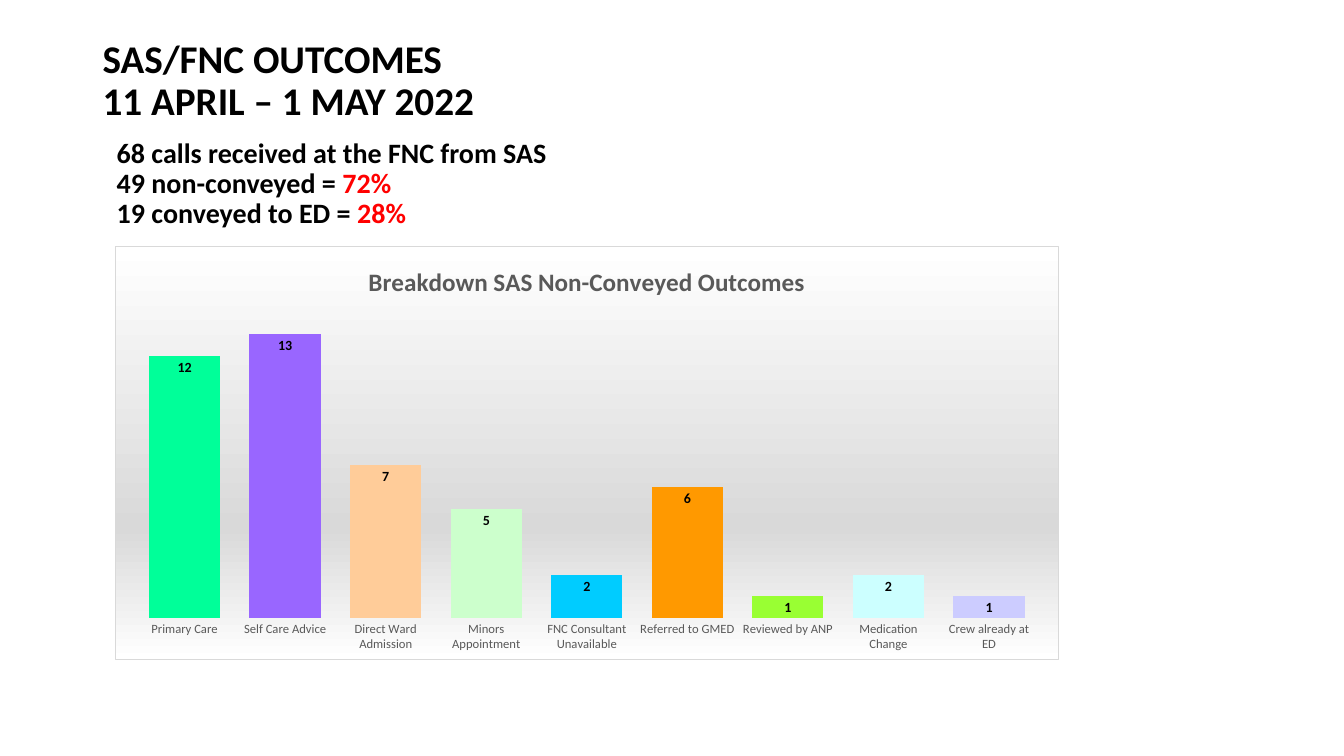
from lxml import etree
from pptx import Presentation
from pptx.chart.data import CategoryChartData
from pptx.dml.color import RGBColor
from pptx.enum.chart import XL_CHART_TYPE, XL_LABEL_POSITION, XL_TICK_MARK
from pptx.oxml import parse_xml
from pptx.oxml.ns import nsdecls, qn
from pptx.util import Inches, Pt

COLUMNS = XL_CHART_TYPE.COLUMN_CLUSTERED
INSIDE_END = XL_LABEL_POSITION.INSIDE_END
NO_TICK = XL_TICK_MARK.NONE

BLACK = RGBColor(0x00, 0x00, 0x00)
RED = RGBColor(0xFF, 0x00, 0x00)
GREY = RGBColor(0x59, 0x59, 0x59)
FONT = "Calibri"

# Content: each line is a list of (text, colour) runs
TITLE_LINES = [
    [("SAS/FNC OUTCOMES", BLACK)],
    [("11 APRIL – 1 MAY 2022", BLACK)],
]
SUMMARY_LINES = [
    [("68 calls received at the FNC from SAS", BLACK)],
    [("49 non-conveyed = ", BLACK), ("72%", RED)],
    [("19 conveyed to ED = ", BLACK), ("28%", RED)],
]
CHART_TITLE = "Breakdown SAS Non-Conveyed Outcomes"
OUTCOMES = [
    ("Primary Care", 12, "00FF99"),
    ("Self Care Advice", 13, "9966FF"),
    ("Direct Ward Admission", 7, "FFCC99"),
    ("Minors Appointment", 5, "CCFFCC"),
    ("FNC Consultant Unavailable", 2, "00CCFF"),
    ("Referred to GMED", 6, "FF9900"),
    ("Reviewed by ANP", 1, "99FF33"),
    ("Medication Change", 2, "CCFFFF"),
    ("Crew already at ED", 1, "CCCCFF"),
]
PLOT_AREA = {"x": 0.02, "y": 0.16, "w": 0.96, "h": 0.74}
CHART_FRAME = f"""<c:spPr {nsdecls("c", "a")}>
  <a:gradFill><a:gsLst>
    <a:gs pos="0"><a:srgbClr val="FFFFFF"/></a:gs>
    <a:gs pos="68000"><a:srgbClr val="D9D9D9"/></a:gs>
    <a:gs pos="100000"><a:srgbClr val="FFFFFF"/></a:gs>
  </a:gsLst><a:lin ang="5400000" scaled="0"/></a:gradFill>
  <a:ln w="9525"><a:solidFill><a:srgbClr val="D9D9D9"/></a:solidFill></a:ln>
</c:spPr>"""


def style_font(font, size, color, bold=False):
    font.name = FONT
    font.size = Pt(size)
    font.bold = bold
    font.color.rgb = color


def add_lines(slide, lines, box, size):
    frame = slide.shapes.add_textbox(*map(Inches, box)).text_frame
    frame.word_wrap = True
    paragraph = frame.paragraphs[0]
    paragraph.line_spacing = 0.9
    for index, line in enumerate(lines):
        if index:
            paragraph.add_line_break()
        for text, color in line:
            run = paragraph.add_run()
            run.text = text
            style_font(run.font, size, color, bold=True)


def add_outcome_chart(slide):
    data = CategoryChartData()
    data.categories = [name for name, _, _ in OUTCOMES]
    data.add_series("Series 1", [value for _, value, _ in OUTCOMES])
    box = map(Inches, (1.14, 2.44, 9.36, 4.11))
    chart = slide.shapes.add_chart(COLUMNS, *box, data).chart
    style_font(chart.font, 10, BLACK)
    chart.has_legend = False

    # Heading
    chart.has_title = True
    run = chart.chart_title.text_frame.paragraphs[0].add_run()
    run.text = CHART_TITLE
    style_font(run.font, 18, GREY, bold=True)
    chart.chart_title.include_in_layout = False

    # Axes
    category_axis = chart.category_axis
    category_axis.major_tick_mark = NO_TICK
    category_axis.format.line.fill.background()
    style_font(category_axis.tick_labels.font, 9, GREY)
    value_axis = chart.value_axis
    value_axis.visible = False
    value_axis.has_major_gridlines = False
    value_axis.minimum_scale = 0
    value_axis.maximum_scale = 14

    # Columns and value labels
    plot = chart.plots[0]
    plot.gap_width = 41
    plot.vary_by_categories = False
    series = plot.series[0]
    for index, (_, _, color) in enumerate(OUTCOMES):
        fill = series.points[index].format.fill
        fill.solid()
        fill.fore_color.rgb = RGBColor.from_string(color)
    labels = series.data_labels
    labels.show_value = True
    labels.position = INSIDE_END
    style_font(labels.font, 10, BLACK, bold=True)

    # Gradient frame with square corners
    chart_space = chart.element
    chart_space.find(qn("c:chart")).addnext(parse_xml(CHART_FRAME))
    if chart_space.find(qn("c:roundedCorners")) is None:
        corners = parse_xml(f'<c:roundedCorners {nsdecls("c")} val="0"/>')
        chart_space.find(qn("c:date1904")).addnext(corners)

    # Fixed plot area
    plot_area = chart_space.find(qn("c:chart")).find(qn("c:plotArea"))
    layout = plot_area.find(qn("c:layout"))
    if layout is None:
        layout = parse_xml(f'<c:layout {nsdecls("c")}/>')
        plot_area.insert(0, layout)
    manual = etree.SubElement(layout, qn("c:manualLayout"))
    settings = {"layoutTarget": "inner", "xMode": "edge", "yMode": "edge", **PLOT_AREA}
    for name, value in settings.items():
        etree.SubElement(manual, qn(f"c:{name}")).set("val", str(value))


def main():
    presentation = Presentation()
    presentation.slide_width = Inches(13.33)
    presentation.slide_height = Inches(7.5)
    slide = presentation.slides.add_slide(presentation.slide_layouts[6])
    add_lines(slide, TITLE_LINES, (0.92, 0.34, 11.5, 0.95), 28)
    add_lines(slide, SUMMARY_LINES, (1.06, 1.33, 11.36, 1.01), 20)
    add_outcome_chart(slide)
    presentation.save("out.pptx")


if __name__ == "__main__":
    main()
